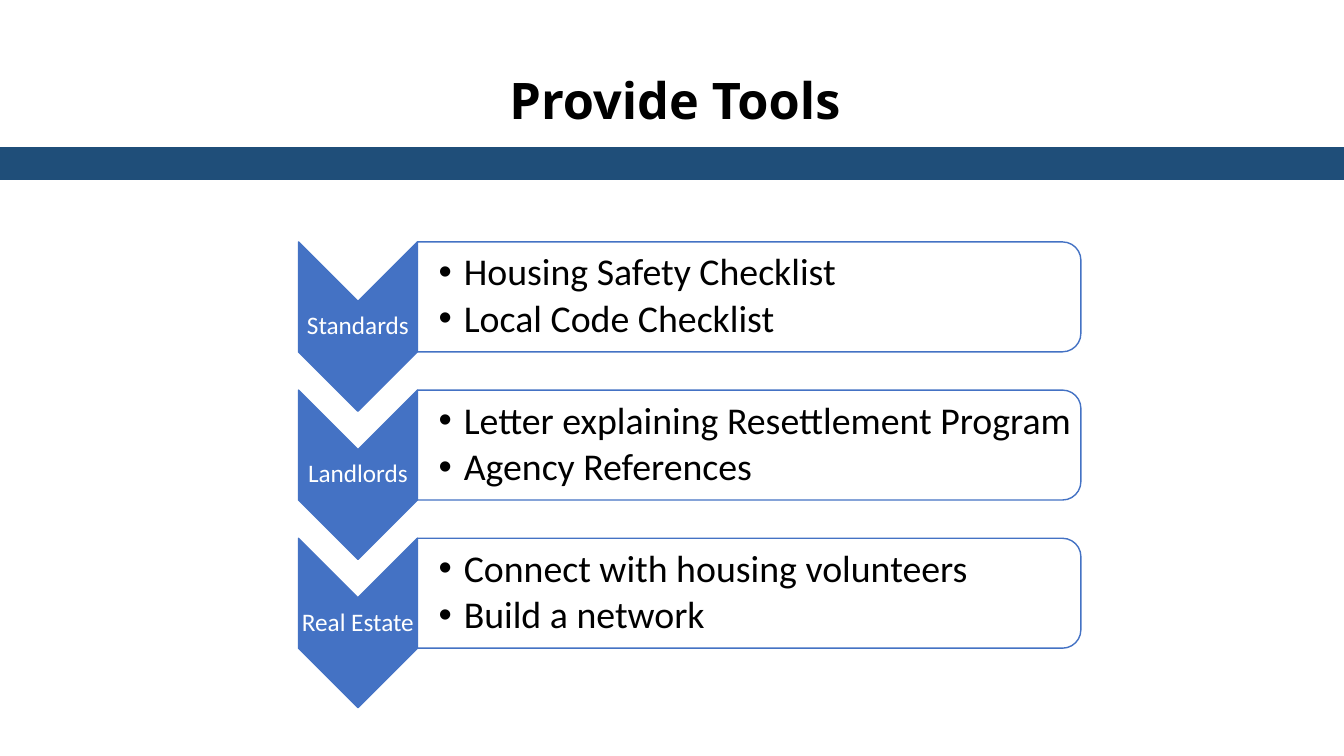
from lxml import etree
from pptx import Presentation
from pptx.dml.color import RGBColor
from pptx.enum.shapes import MSO_SHAPE as SHAPE
from pptx.enum.text import MSO_ANCHOR as ANCHOR, MSO_AUTO_SIZE as AUTO_SIZE, PP_ALIGN as ALIGN
from pptx.oxml.ns import qn
from pptx.util import Inches, Pt

NAVY, BLUE, WHITE, BLACK = "1F4E79", "4472C4", "FFFFFF", "000000"
SLIDE_WIDTH, SLIDE_HEIGHT = 13.33, 7.5

# Grid: an arrow column, a panel column and three rows
ARROW_LEFT, ARROW_WIDTH, ARROW_LENGTH = 2.96, 1.18, 1.68
PANEL_LEFT, PANEL_WIDTH, PANEL_HEIGHT = ARROW_LEFT + ARROW_WIDTH, 6.58, 1.09
FIRST_ROW, ROW_PITCH = 2.4, 1.47
ROWS = [
    ("Standards", ["Housing Safety Checklist", "Local Code Checklist"]),
    ("Landlords", ["Letter explaining Resettlement Program", "Agency References"]),
    ("Real Estate", ["Connect with housing volunteers", "Build a network"]),
]

presentation = Presentation()
presentation.slide_width = Inches(SLIDE_WIDTH)
presentation.slide_height = Inches(SLIDE_HEIGHT)
slide = presentation.slides.add_slide(presentation.slide_layouts[5])


def add_block(preset, left, top, width, height, fill, line, turned=False):
    """Add a filled shape; a turned one fills the same area rotated by 90 degrees."""
    if turned:
        left, top = left + (width - height) / 2, top + (height - width) / 2
        width, height = height, width
    shape = slide.shapes.add_shape(preset, Inches(left), Inches(top), Inches(width), Inches(height))
    shape.rotation = 90 if turned else 0
    shape.shadow.inherit = False
    shape.fill.solid()
    shape.fill.fore_color.rgb = RGBColor.from_string(fill)
    shape.line.color.rgb = RGBColor.from_string(line)
    shape.line.width = Pt(1)


def add_text(box, lines, size, color, inset, left_inset, space_after, bullets=False):
    """Fill a text box with vertically centred lines."""
    frame = box.text_frame
    frame.word_wrap = True
    frame.vertical_anchor = ANCHOR.MIDDLE
    frame.margin_top = frame.margin_right = frame.margin_bottom = Inches(inset)
    frame.margin_left = Inches(left_inset)
    frame.text = "\n".join(lines)
    for paragraph in frame.paragraphs:
        paragraph.alignment = ALIGN.LEFT if bullets else ALIGN.CENTER
        paragraph.line_spacing = 0.9
        paragraph.space_after = Pt(space_after)
        if bullets:
            properties = paragraph._p.get_or_add_pPr()
            properties.set("marL", str(Inches(0.25)))
            properties.set("indent", str(-Inches(0.25)))
            etree.SubElement(properties, qn("a:buFont"), typeface="Arial")
            etree.SubElement(properties, qn("a:buChar"), char="•")
        paragraph.font.name = "Calibri"
        paragraph.font.size = Pt(size)
        paragraph.font.color.rgb = RGBColor.from_string(color)


# Title
title = slide.shapes.title
title.left, title.top, title.width, title.height = (Inches(n) for n in (0.58, 0.64, 12.23, 1.45))
title.text_frame.text = "Provide Tools"
title.text_frame.vertical_anchor = ANCHOR.TOP
title.text_frame.auto_size = AUTO_SIZE.NONE
heading = title.text_frame.paragraphs[0]
heading.alignment = ALIGN.CENTER
heading.line_spacing = 1.0
heading.font.name = "Open Sans"
heading.font.size = Pt(36)
heading.font.bold = True
heading.font.color.rgb = RGBColor.from_string(BLACK)

# Band across the slide
add_block(SHAPE.RECTANGLE, 0, 1.47, SLIDE_WIDTH, 0.31, NAVY, NAVY)

# Rows: arrow with its label, panel with its bullets
for row, (label, points) in enumerate(ROWS):
    top = FIRST_ROW + row * ROW_PITCH
    add_block(SHAPE.CHEVRON, ARROW_LEFT, top, ARROW_WIDTH, ARROW_LENGTH, BLUE, BLUE, turned=True)
    label_box = slide.shapes.add_textbox(
        Inches(ARROW_LEFT), Inches(top + ARROW_WIDTH / 2), Inches(ARROW_WIDTH), Inches(0.5))
    add_text(label_box, [label], 18, WHITE, 0.01, 0.01, 6)

    add_block(SHAPE.ROUND_2_SAME_RECTANGLE, PANEL_LEFT, top, PANEL_WIDTH, PANEL_HEIGHT,
              WHITE, BLUE, turned=True)
    points_box = slide.shapes.add_textbox(
        Inches(PANEL_LEFT), Inches(top + 0.05), Inches(PANEL_WIDTH - 0.05), Inches(PANEL_HEIGHT - 0.1))
    add_text(points_box, points, 27, BLACK, 0.02, 0.21, 4, bullets=True)

presentation.save("out.pptx")
